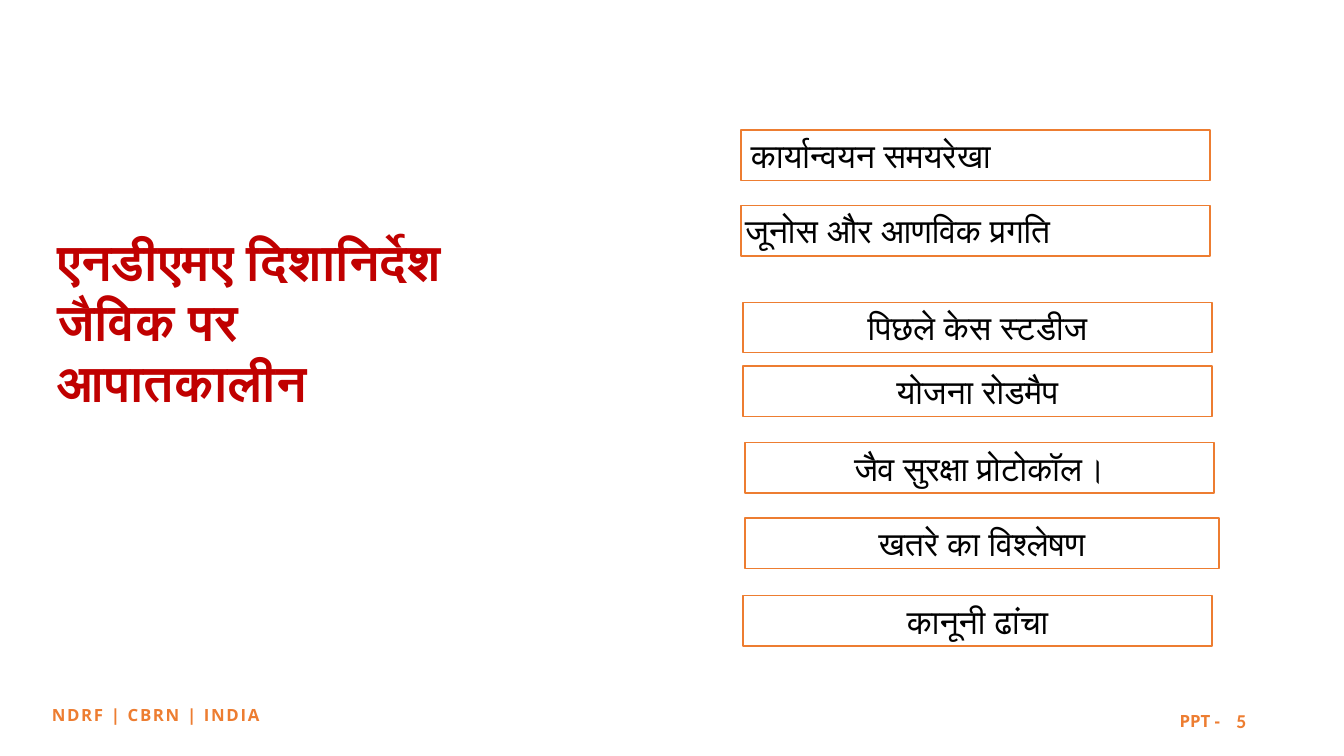
import pptx
import pptx.dml.color
import pptx.enum.shapes
import pptx.enum.text
import pptx.oxml.ns
import pptx.util
from lxml import etree

Inches = pptx.util.Inches
Align = pptx.enum.text.PP_ALIGN
Anchor = pptx.enum.text.MSO_ANCHOR

ORANGE, RED, BLACK, WHITE = "ED7D31", "C00000", "000000", "FFFFFF"


def colour(hex_string):
    return pptx.dml.color.RGBColor.from_string(hex_string)


def write_text(shape, text, size=24, color=BLACK, font="Open Sans", bold=False,
               align=Align.CENTER, anchor=Anchor.TOP, margins=(0.1, 0.05),
               spacing=None, wrap=True):
    """Fill a shape with one paragraph; newlines become line breaks."""
    frame = shape.text_frame
    frame.word_wrap = wrap
    frame.auto_size = pptx.enum.text.MSO_AUTO_SIZE.NONE
    frame.vertical_anchor = anchor
    frame.margin_left = frame.margin_right = Inches(margins[0])
    frame.margin_top = frame.margin_bottom = Inches(margins[1])
    paragraph = frame.paragraphs[0]
    paragraph.alignment = align
    for index, line in enumerate(text.split("\n")):
        if index:
            paragraph.add_line_break()
        run = paragraph.add_run()
        run.text = line
        run.font.size = pptx.util.Pt(size)
        run.font.bold = bold
        run.font.color.rgb = colour(color)
        run.font.name = font
        properties = run.font._element
        complex_font = etree.SubElement(properties, pptx.oxml.ns.qn("a:cs"))
        complex_font.set("typeface", font)
        if spacing:
            properties.set("spc", str(round(spacing * 100)))


class SlideBuilder:
    def __init__(self, presentation):
        self.slide = presentation.slides.add_slide(presentation.slide_layouts[5])

    def title(self, text, left, top, width, height, **style):
        shape = self.slide.shapes.title
        shape.left, shape.top = Inches(left), Inches(top)
        shape.width, shape.height = Inches(width), Inches(height)
        write_text(shape, text, **style)

    def label(self, text, left, top, width, height, **style):
        shape = self.slide.shapes.add_textbox(
            Inches(left), Inches(top), Inches(width), Inches(height))
        write_text(shape, text, color=ORANGE, bold=True, **style)

    def topic(self, text, left, top, width=4.65, **style):
        shape = self.slide.shapes.add_shape(
            pptx.enum.shapes.MSO_SHAPE.RECTANGLE,
            Inches(left), Inches(top), Inches(width), Inches(0.5))
        shape.shadow.inherit = False
        shape.fill.solid()
        shape.fill.fore_color.rgb = colour(WHITE)
        shape.line.color.rgb = colour(ORANGE)
        shape.line.width = pptx.util.Pt(1)
        write_text(shape, text, **style)


def main():
    presentation = pptx.Presentation()
    presentation.slide_width = Inches(13.33)
    presentation.slide_height = Inches(7.5)
    builder = SlideBuilder(presentation)

    # Title
    builder.title("एनडीएमए दिशानिर्देश\nजैविक पर\nआपातकालीन", 0.53, 2.24, 4.93, 1.9,
                  size=36, color=RED, bold=True, align=Align.LEFT, margins=(0.04, 0.04))

    # Topic boxes
    builder.topic("कार्यान्वयन समयरेखा", 7.35, 1.29, align=Align.LEFT)
    builder.topic("जूनोस और आणविक प्रगति", 7.35, 2.04, align=Align.JUSTIFY,
                  margins=(0.04, 0.04))
    builder.topic("पिछले केस स्टडीज", 7.37, 3)
    builder.topic("योजना रोडमैप", 7.37, 3.63)
    builder.topic("जैव सुरक्षा प्रोटोकॉल।", 7.39, 4.39)
    builder.topic("खतरे का विश्लेषण", 7.39, 5.14, width=4.7)
    builder.topic("कानूनी ढांचा", 7.37, 5.91)

    # Footer
    builder.label("NDRF | CBRN | INDIA", 0.17, 6.9, 2.75, 0.37,
                  size=12, margins=(0.09, 0.09), spacing=1.2)
    builder.label("PPT -", 11.61, 6.96, 0.58, 0.37,
                  size=12, margins=(0.09, 0.09), wrap=False)
    builder.label("5", 9.46, 6.95, 3, 0.4, size=14, font="Calibri",
                  align=Align.RIGHT, anchor=Anchor.MIDDLE)

    presentation.save("out.pptx")


if __name__ == "__main__":
    main()
